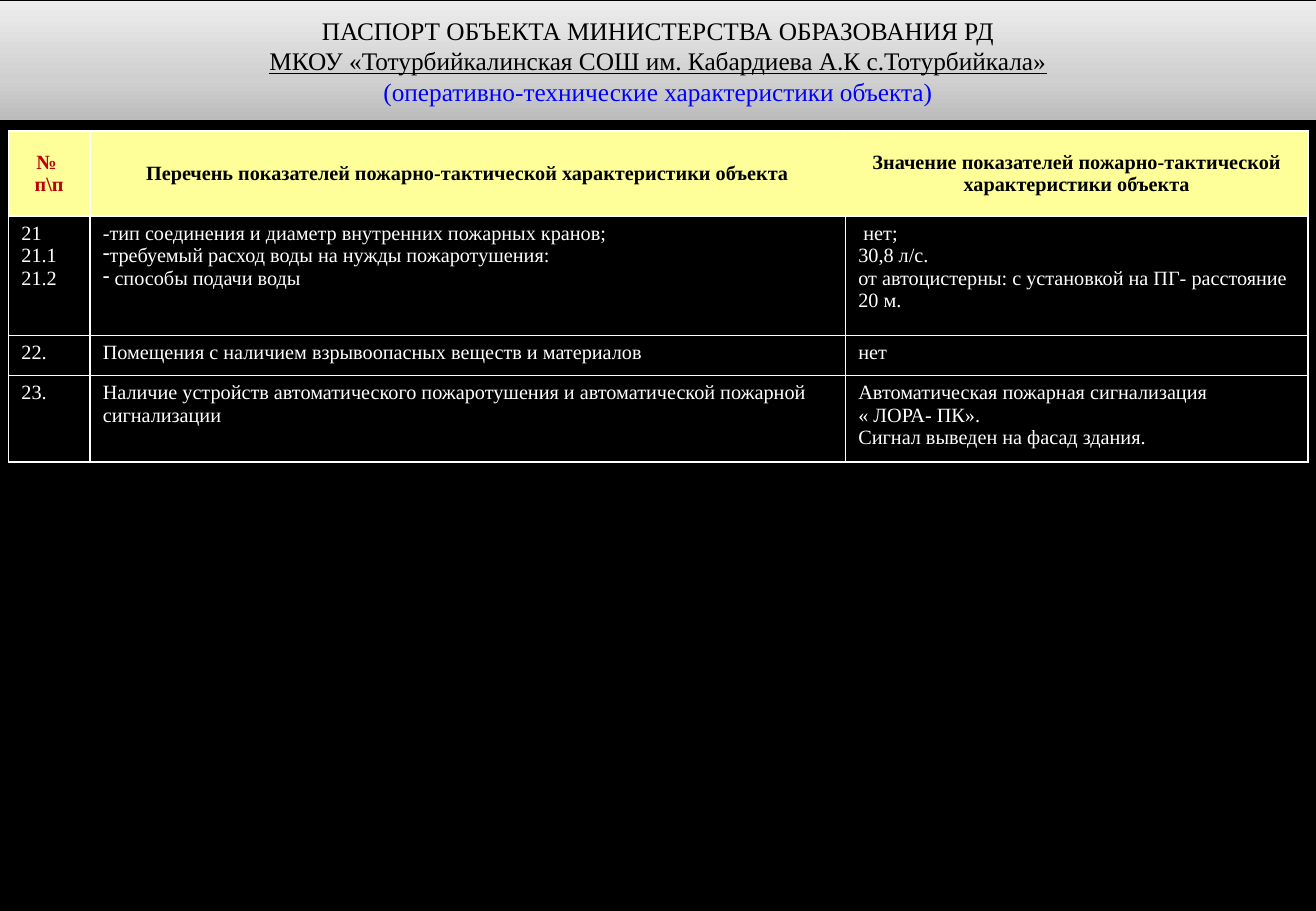
from copy import deepcopy

from lxml import etree
from pptx import Presentation
from pptx import util as u
from pptx.dml.color import RGBColor
from pptx.enum import text
from pptx.oxml import ns

BLACK = RGBColor(0x00, 0x00, 0x00)
WHITE = RGBColor(0xFF, 0xFF, 0xFF)
RED = RGBColor(0xC0, 0x00, 0x00)
BLUE = RGBColor(0x00, 0x00, 0xFF)
YELLOW = RGBColor(0xFF, 0xFF, 0x99)
BANNER_STOPS = [
    (0, RGBColor(0xBC, 0xBC, 0xBC)),
    (0.35, RGBColor(0xD0, 0xD0, 0xD0)),
    (1, RGBColor(0xED, 0xED, 0xED)),
]
BULLET = "•"

HEADING = [
    ("ПАСПОРТ ОБЪЕКТА МИНИСТЕРСТВА ОБРАЗОВАНИЯ РД", BLACK, False),
    ("МКОУ «Тотурбийкалинская СОШ им. Кабардиева А.К с.Тотурбийкала»", BLACK, True),
    ("(оперативно-технические характеристики объекта)", BLUE, False),
]
COLUMN_WIDTHS = [48.24, 447.84, 274.32]
ROW_HEIGHTS = [50.4, 70.8, 23.76, 51.12]
INDICATORS = [
    [
        ["№ ", "п\\п"],
        ["Перечень показателей пожарно-тактической характеристики объекта"],
        ["Значение показателей пожарно-тактической характеристики объекта"],
    ],
    [
        ["21", "21.1", "21.2"],
        [
            "-тип соединения и диаметр внутренних пожарных кранов;",
            BULLET + "требуемый расход воды на нужды пожаротушения:",
            BULLET + " способы подачи воды",
        ],
        [" нет;", "30,8 л/с.", "от автоцистерны: с установкой на ПГ- расстояние 20 м."],
    ],
    [["22."], ["Помещения с наличием взрывоопасных веществ и материалов"], ["нет"]],
    [
        ["23."],
        ["Наличие устройств автоматического пожаротушения и автоматической пожарной сигнализации"],
        [
            "Автоматическая пожарная сигнализация",
            "« ЛОРА- ПК».",
            "Сигнал выведен на фасад здания.",
        ],
    ],
]


class PassportSlide:
    font_name = "Times New Roman"

    def __init__(self, deck):
        self.slide = deck.slides.add_slide(deck.slide_layouts[5])
        self.slide.background.fill.solid()
        self.slide.background.fill.fore_color.rgb = BLACK

    def line(self, paragraph, words, size, color, bold=False, underline=False, centred=False):
        paragraph.alignment = text.PP_ALIGN.CENTER if centred else text.PP_ALIGN.LEFT
        if words.startswith(BULLET):
            words = words[len(BULLET):]
            properties = paragraph._p.get_or_add_pPr()
            properties.set("marL", "0")
            properties.set("indent", "0")
            etree.SubElement(properties, ns.qn("a:buChar"), char="-")
        paragraph.text = words
        font = paragraph.font
        font.name, font.size, font.color.rgb = self.font_name, u.Pt(size), color
        font.bold, font.underline = bold, underline

    def heading(self, lines, left, top, width, height):
        banner = self.slide.shapes.title
        banner.left, banner.top = u.Pt(left), u.Pt(top)
        banner.width, banner.height = u.Pt(width), u.Pt(height)
        banner.fill.gradient()
        banner.fill.gradient_angle = 90
        first_stop = banner._element.spPr.find(".//" + ns.qn("a:gs"))
        first_stop.addnext(deepcopy(first_stop))
        for stop, (position, color) in zip(banner.fill.gradient_stops, BANNER_STOPS):
            stop.position, stop.color.rgb = position, color
        frame = banner.text_frame
        frame.word_wrap = True
        frame.auto_size = text.MSO_AUTO_SIZE.NONE
        frame.vertical_anchor = text.MSO_ANCHOR.MIDDLE
        for index, (words, color, underline) in enumerate(lines):
            paragraph = frame.paragraphs[0] if index == 0 else frame.add_paragraph()
            self.line(paragraph, words, 15, color, underline=underline, centred=True)

    def border(self, cell):
        properties = cell._tc.get_or_add_tcPr()
        for index, side in enumerate(("lnL", "lnR", "lnT", "lnB")):
            edge = etree.Element(ns.qn("a:" + side), w=str(u.Pt(1)))
            paint = etree.SubElement(edge, ns.qn("a:solidFill"))
            etree.SubElement(paint, ns.qn("a:srgbClr"), val=str(WHITE))
            properties.insert(index, edge)

    def cell(self, cell, lines, is_header, color):
        cell.fill.solid()
        cell.fill.fore_color.rgb = YELLOW if is_header else BLACK
        cell.margin_left = cell.margin_right = u.Pt(7.7)
        cell.margin_top = cell.margin_bottom = u.Pt(3.6)
        cell.vertical_anchor = text.MSO_ANCHOR.MIDDLE if is_header else text.MSO_ANCHOR.TOP
        self.border(cell)
        frame = cell.text_frame
        for index, words in enumerate(lines):
            paragraph = frame.paragraphs[0] if index == 0 else frame.add_paragraph()
            self.line(paragraph, words, 12, color, bold=is_header, centred=is_header)

    def table(self, rows, widths, heights, left, top):
        table = self.slide.shapes.add_table(
            len(rows), len(widths), u.Pt(left), u.Pt(top), u.Pt(sum(widths)), u.Pt(sum(heights))
        ).table
        table.horz_banding = False
        for column, width in zip(table.columns, widths):
            column.width = u.Pt(width)
        for row, height in zip(table.rows, heights):
            row.height = u.Pt(height)
        for row_index, row in enumerate(rows):
            for column_index, lines in enumerate(row):
                is_header = row_index == 0
                color = WHITE
                if is_header:
                    color = RED if column_index == 0 else BLACK
                self.cell(table.cell(row_index, column_index), lines, is_header, color)


def main():
    deck = Presentation()
    deck.slide_width, deck.slide_height = u.Pt(780), u.Pt(540)
    passport = PassportSlide(deck)
    passport.heading(HEADING, 0, 0.6, 780, 70.6)
    passport.table(INDICATORS, COLUMN_WIDTHS, ROW_HEIGHTS, 5.04, 77.76)
    deck.save("out.pptx")


if __name__ == "__main__":
    main()
